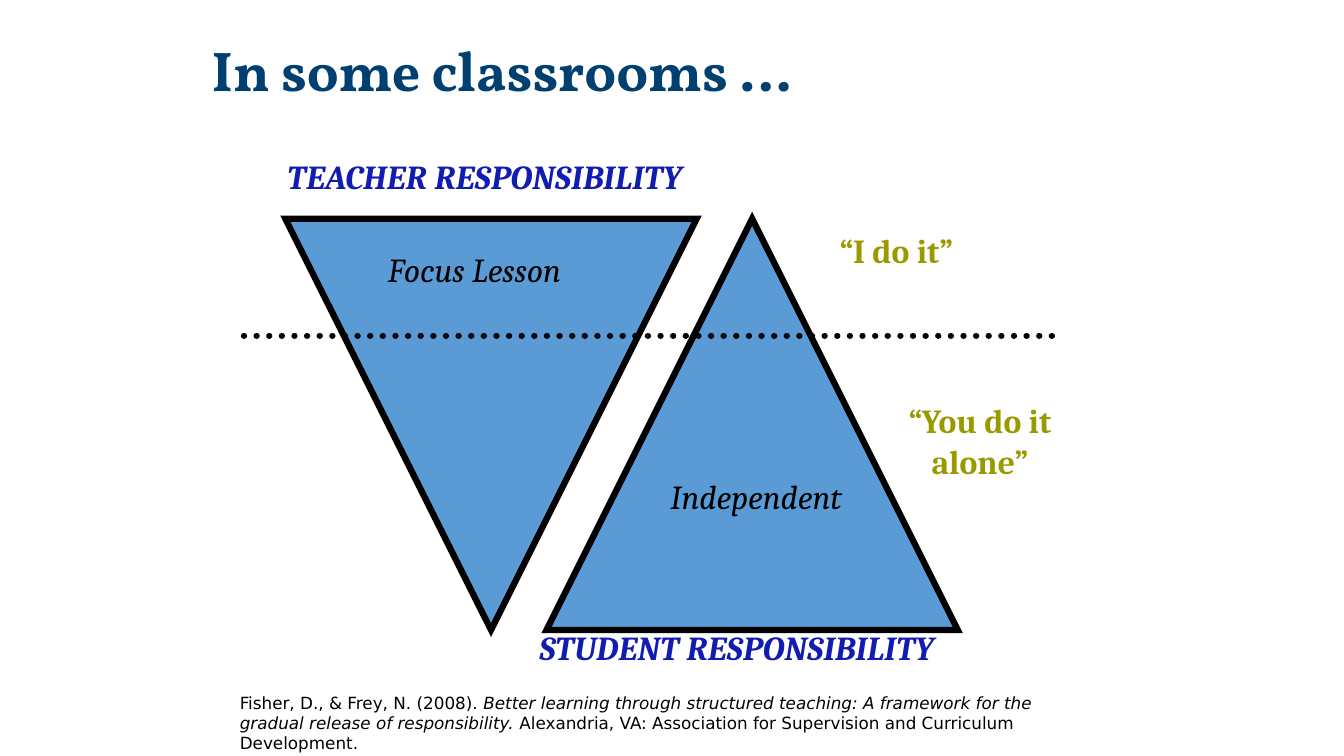
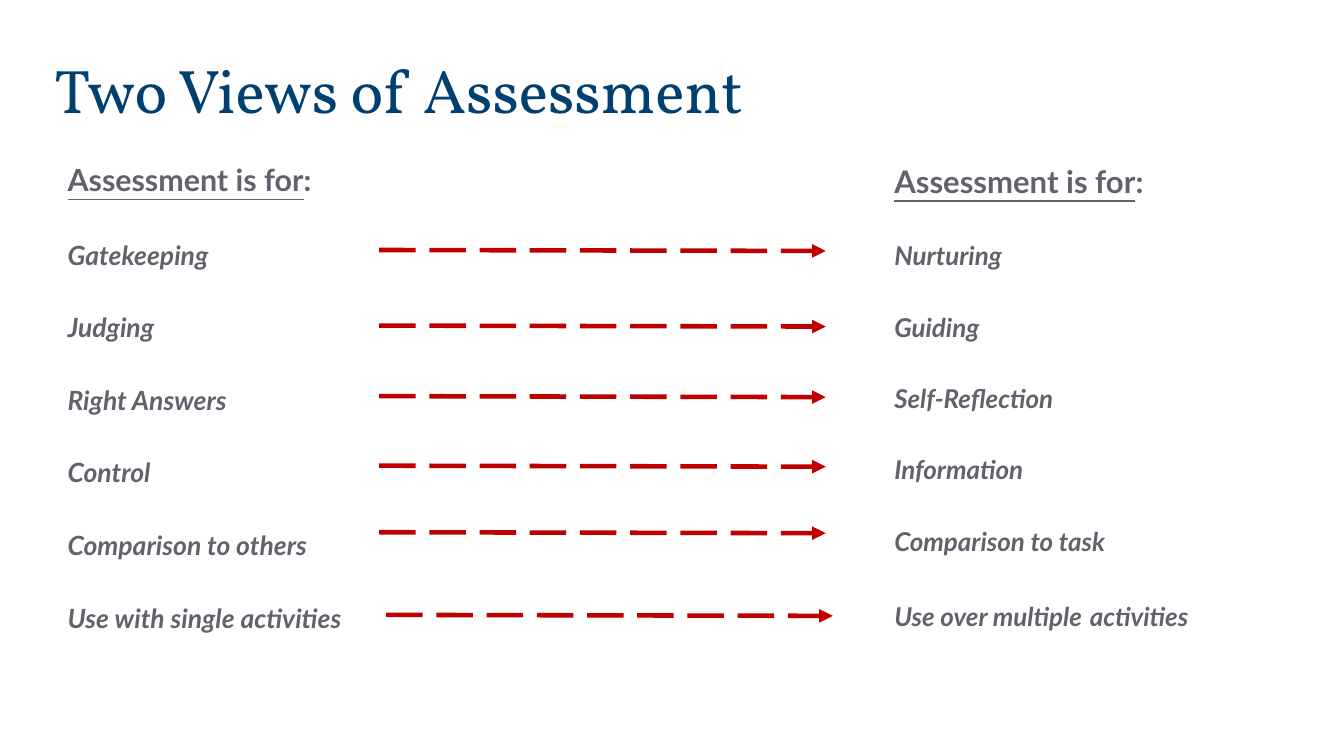
from pptx import Presentation, util as u
from pptx.dml.color import RGBColor
from pptx.enum import dml, shapes, text
from pptx.oxml.ns import qn
from lxml import etree

PX = 9144  # EMU, 100 px to the inch
NAVY = RGBColor(0x00, 0x40, 0x71)
BLUE = RGBColor(0x5B, 0x9B, 0xD5)
INDIGO = RGBColor(0x13, 0x1C, 0xB0)
OLIVE = RGBColor(0x99, 0x99, 0x00)
GREY = RGBColor(0x60, 0x63, 0x6B)
RED = RGBColor(0xC0, 0x00, 0x00)
BLACK = RGBColor(0, 0, 0)

TITLE_ONLY, TWO_CONTENT = 5, 3
LEFT, CENTER = text.PP_ALIGN.LEFT, text.PP_ALIGN.CENTER

TITLE = dict(name="Vollkorn", size=44, bold=False, color=NAVY)
LABEL = dict(name="Cambria", size=24, color=BLACK, italic=True)
OWNER = dict(LABEL, bold=True, color=INDIGO)
QUOTE = dict(LABEL, bold=True, italic=False, color=OLIVE)
SOURCE = dict(name="DejaVu Sans", size=12, color=BLACK)
LIST = dict(name="Lato", bold=True, color=GREY)


class Deck:
    def __init__(self, width, height):
        self.prs = Presentation()
        self.prs.slide_width, self.prs.slide_height = width * PX, height * PX
        self.s = None

    def slide(self, layout, title, box, **style):
        self.s = self.prs.slides.add_slide(self.prs.slide_layouts[layout])
        sp = self.place(self.s.shapes.title, box)
        tf = self.frame(sp, anchor=text.MSO_ANCHOR.MIDDLE)
        self.fill_paragraph(tf.paragraphs[0], [(title, {})], dict(TITLE, **style),
                            alignment=LEFT, line_spacing=0.9)

    def place(self, sp, box):
        for name, px in zip(("left", "top", "width", "height"), box):
            setattr(sp, name, px * PX)
        return sp

    def frame(self, sp, wrap=True, anchor=text.MSO_ANCHOR.TOP):
        tf = sp.text_frame
        tf.auto_size = text.MSO_AUTO_SIZE.NONE
        tf.word_wrap, tf.vertical_anchor = wrap, anchor
        return tf

    def fill_paragraph(self, p, runs, style, **layout):
        """Fill a paragraph with (text, style changes) runs."""
        for name, value in layout.items():
            setattr(p, name, value)
        for words, changes in runs:
            r = p.add_run()
            r.text = words
            for name, value in dict(style, **changes).items():
                if name == "color":
                    r.font.color.rgb = value
                else:
                    setattr(r.font, name, u.Pt(value) if name == "size" else value)

    def label(self, box, lines, style, align=LEFT, wrap=True):
        """Add a text box; each line is a list of runs."""
        sp = self.s.shapes.add_textbox(*(px * PX for px in box))
        tf = self.frame(sp, wrap)
        for i, runs in enumerate(lines):
            p = tf.add_paragraph() if i else tf.paragraphs[0]
            self.fill_paragraph(p, runs, style, alignment=align)

    def column(self, idx, box, heading_size, item_size, gap, items):
        """Fill a body placeholder with an underlined heading and its items."""
        tf = self.frame(self.place(self.s.placeholders[idx], box))
        heading = dict(LIST, size=heading_size)
        item = dict(LIST, size=item_size, italic=True)
        rows = [([("Assessment is for", dict(underline=True)), (":", {})], heading)]
        rows += [(runs, item) for runs in items]
        for i, (runs, style) in enumerate(rows):
            p = tf.add_paragraph() if i else tf.paragraphs[0]
            pPr = p._p.get_or_add_pPr()
            pPr.set("marL", str(25 * PX))
            pPr.set("indent", str(-25 * PX))
            etree.SubElement(pPr, qn("a:buNone"))
            self.fill_paragraph(p, runs, style, alignment=LEFT, line_spacing=0.7,
                                space_before=u.Pt(gap if i else 0))

    def triangle(self, box, rotation=0):
        sp = self.s.shapes.add_shape(shapes.MSO_SHAPE.ISOSCELES_TRIANGLE,
                                     *(px * PX for px in box))
        sp.rotation = rotation
        sp.shadow.inherit = False
        sp.fill.solid()
        sp.fill.fore_color.rgb = BLUE
        ln = self.stroke(sp, BLACK, 4.5)
        etree.SubElement(ln, qn("a:miter"), lim="800000")

    def stroke(self, sp, color, width):
        sp.line.color.rgb = color
        sp.line.width = u.Pt(width)
        return sp.element.spPr.find(qn("a:ln"))

    def line(self, ends, color, width, dash, arrow=False):
        sp = self.s.shapes.add_connector(shapes.MSO_CONNECTOR.STRAIGHT,
                                         *(px * PX for px in ends))
        ln = self.stroke(sp, color, width)
        sp.line.dash_style = dash
        if arrow:
            etree.SubElement(ln, qn("a:tailEnd"), type="triangle")
        else:
            ln.set("cap", "rnd")
        etree.SubElement(sp.element.spPr, qn("a:effectLst"))


def plain(*lines):
    return [[(line, {})] for line in lines]


def classrooms(deck):
    deck.slide(TITLE_ONLY, "In some classrooms …", (200, 34, 900, 78),
               size=40, bold=True)
    deck.triangle((542, 217, 408, 408))
    deck.triangle((283, 217, 408, 408), rotation=180)
    deck.label((275, 150, 458, 50), plain("TEACHER RESPONSIBILITY"), OWNER)
    deck.label((525, 617, 475, 50), plain("STUDENT RESPONSIBILITY"), OWNER)
    deck.line((242, 333, 1050, 333), BLACK, 4.5, dml.MSO_LINE.ROUND_DOT)
    deck.label((358, 242, 225, 50), plain("Focus Lesson"), LABEL, CENTER)
    deck.label((823, 223, 140, 50), plain("“I do it”"), QUOTE, wrap=False)
    deck.label((650, 467, 200, 50), plain("Independent"), LABEL, CENTER)
    deck.label((892, 392, 160, 91), plain("“You do it", "alone”"), QUOTE,
               CENTER, wrap=False)
    deck.label((228, 682, 861, 94), [[
        ("Fisher, D., & Frey, N. (2008). ", {}),
        ("Better learning through structured teaching: A framework for the "
         "gradual release of responsibility. ", dict(italic=True)),
        ("Alexandria, VA: Association for Supervision and Curriculum "
         "Development.", {})]], SOURCE)


def two_views(deck):
    deck.slide(TWO_CONTENT, "Two Views of Assessment", (44, 16, 1243, 153))
    deck.column(1, (57, 165, 800, 490), 21.7, 18.9, 36, plain(
        "Gatekeeping", "Judging", "Right Answers", "Control",
        "Comparison to others", "Use with single activities"))
    wide_space = (" ", dict(size=22.2, bold=False, italic=False))
    deck.column(2, (877, 166, 354, 521), 22.2, 18.5, 35.5, plain(
        "Nurturing", "Guiding", "Self-Reflection", "Information",
        "Comparison to task") + [
            [("Use over multiple", {}), wide_space, ("activities", {})]])
    for left, y in ((376, 248), (376, 323), (376, 393), (376, 462),
                    (376, 528), (383, 610)):
        deck.line((left, y, left + 443, y + 1), RED, 3.25,
                  dml.MSO_LINE.LONG_DASH, arrow=True)


def main():
    deck = Deck(1333, 750)
    classrooms(deck)
    two_views(deck)
    deck.prs.save("out.pptx")


if __name__ == "__main__":
    main()
